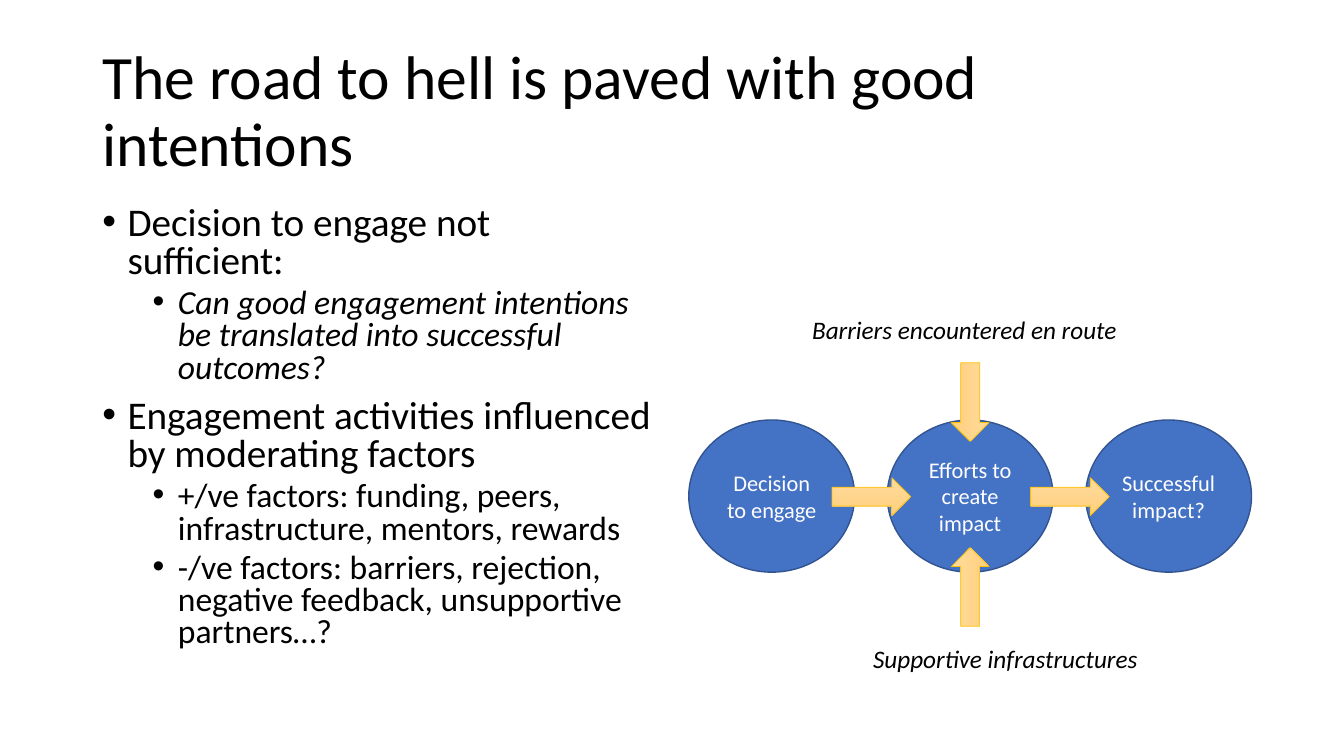
from dataclasses import dataclass

from lxml import etree
from pptx import Presentation
from pptx.dml.color import RGBColor
from pptx.enum.shapes import MSO_SHAPE
from pptx.enum.text import MSO_ANCHOR, PP_ALIGN
from pptx.oxml.ns import qn
from pptx.util import Emu, Pt

PX = 9525  # EMU per px, 96 px to the inch
OVAL, RIGHT_ARROW = MSO_SHAPE.OVAL, MSO_SHAPE.RIGHT_ARROW
TOP, MIDDLE = MSO_ANCHOR.TOP, MSO_ANCHOR.MIDDLE
LEFT, CENTER = PP_ALIGN.LEFT, PP_ALIGN.CENTER


@dataclass(frozen=True)
class Theme:
    font: str = "Calibri"
    text: str = "000000"
    stage_text: str = "FFFFFF"
    stage_fill: str = "4472C4"
    stage_line: str = "325491"
    arrow_light: str = "FFDB9E"
    arrow_dark: str = "FFD07C"
    arrow_line: str = "FFC000"
    title_size: int = 44
    point_sizes: tuple = (28, 24)
    caption_size: int = 18
    stage_size: int = 16


THEME = Theme()

POINTS = [  # level, wording, italic
    (0, "Decision to engage not sufficient:", False),
    (1, "Can good engagement intentions be translated into successful outcomes?", True),
    (0, "Engagement activities influenced by moderating factors", False),
    (1, "+/ve factors: funding, peers, infrastructure, mentors, rewards", False),
    (1, "-/ve factors: barriers, rejection, negative feedback, unsupportive partners…?", False),
]
STAGES = ["Decision to engage", "Efforts to create impact", "Successful impact?"]


def px(*lengths):
    return [Emu(length * PX) for length in lengths]


def color(value):
    return RGBColor.from_string(value)


def add_run(paragraph, wording, size, ink=THEME.text, italic=False):
    run = paragraph.add_run()
    run.text = wording
    run.font.name = THEME.font
    run.font.size = Pt(size)
    run.font.italic = italic
    run.font.color.rgb = color(ink)


def add_frame(slide, box, anchor=TOP):
    frame = slide.shapes.add_textbox(*px(*box)).text_frame
    frame.word_wrap = True
    frame.vertical_anchor = anchor
    return frame


def set_bullet(paragraph, margin, hanging):
    properties = paragraph._p.get_or_add_pPr()
    properties.set("marL", str(margin * PX))
    properties.set("indent", str(-hanging * PX))
    etree.SubElement(properties, qn("a:buFont")).set("typeface", "Arial")
    etree.SubElement(properties, qn("a:buChar")).set("char", "•")


def add_title(slide, box, wording):
    heading = add_frame(slide, box, MIDDLE).paragraphs[0]
    heading.line_spacing = 0.9
    add_run(heading, wording, THEME.title_size)


def add_points(slide, box, points):
    frame = add_frame(slide, box)
    for index, (level, wording, italic) in enumerate(points):
        point = frame.add_paragraph() if index else frame.paragraphs[0]
        point.level = level
        point.alignment = LEFT
        point.line_spacing = 0.8
        point.space_before = Pt(5 if level else 10)
        set_bullet(point, 24 + 48 * level, 24)
        add_run(point, wording, THEME.point_sizes[level], italic=italic)


def add_stage(slide, box, wording):
    stage = slide.shapes.add_shape(OVAL, *px(*box))
    stage.shadow.inherit = False
    stage.fill.solid()
    stage.fill.fore_color.rgb = color(THEME.stage_fill)
    stage.line.color.rgb = color(THEME.stage_line)
    stage.line.width = Pt(1)
    frame = stage.text_frame
    frame.word_wrap = True
    frame.vertical_anchor = MIDDLE
    frame.paragraphs[0].alignment = CENTER
    add_run(frame.paragraphs[0], wording, THEME.stage_size, THEME.stage_text)


def add_arrow(slide, center_x, center_y, rotation=0):
    width, height = 75, 36
    box = px(center_x, center_y, width, height)
    arrow = slide.shapes.add_shape(RIGHT_ARROW, *box)
    arrow.left -= arrow.width // 2
    arrow.top -= arrow.height // 2
    arrow.rotation = rotation
    arrow.shadow.inherit = False
    arrow.fill.gradient()
    arrow.fill.gradient_angle = 270
    shades = (THEME.arrow_light, THEME.arrow_dark)
    for stop, shade in zip(arrow.fill.gradient_stops, shades):
        stop.color.rgb = color(shade)
    arrow.line.color.rgb = color(THEME.arrow_line)
    arrow.line.width = Pt(0.5)


def add_caption(slide, box, wording):
    caption = add_frame(slide, box).paragraphs[0]
    add_run(caption, wording, THEME.caption_size, italic=True)


def add_pathway(slide, box):
    left, top, width, height = box
    stage_width, stage_height = 158, 145
    pitch = (width - stage_width) // (len(STAGES) - 1)
    stage_top = top + 105
    middle_x, middle_y = left + width // 2, stage_top + stage_height // 2

    # Stages, each followed by an arrow to the next
    for index, wording in enumerate(STAGES):
        stage_left = left + index * pitch
        add_stage(slide, (stage_left, stage_top, stage_width, stage_height), wording)
    for index in range(len(STAGES) - 1):
        gap_center = left + index * pitch + (stage_width + pitch) // 2
        add_arrow(slide, gap_center + 1, middle_y + 1)

    # Influences from above and below
    add_arrow(slide, middle_x, middle_y - 89, 90)
    add_arrow(slide, middle_x, middle_y + 87, 270)
    add_caption(slide, (left + 108, top, 319, 38), "Barriers encountered en route")
    add_caption(slide, (left + 166, top + height - 38, 281, 38), "Supportive infrastructures")


def main():
    deck = Presentation()
    deck.slide_width, deck.slide_height = px(1280, 720)
    slide = deck.slides.add_slide(deck.slide_layouts[6])
    add_title(slide, (88, 38, 1104, 139), "The road to hell is paved with good intentions")
    add_points(slide, (88, 192, 544, 457), POINTS)
    add_pathway(slide, (656, 295, 536, 351))
    deck.save("out.pptx")


if __name__ == "__main__":
    main()
